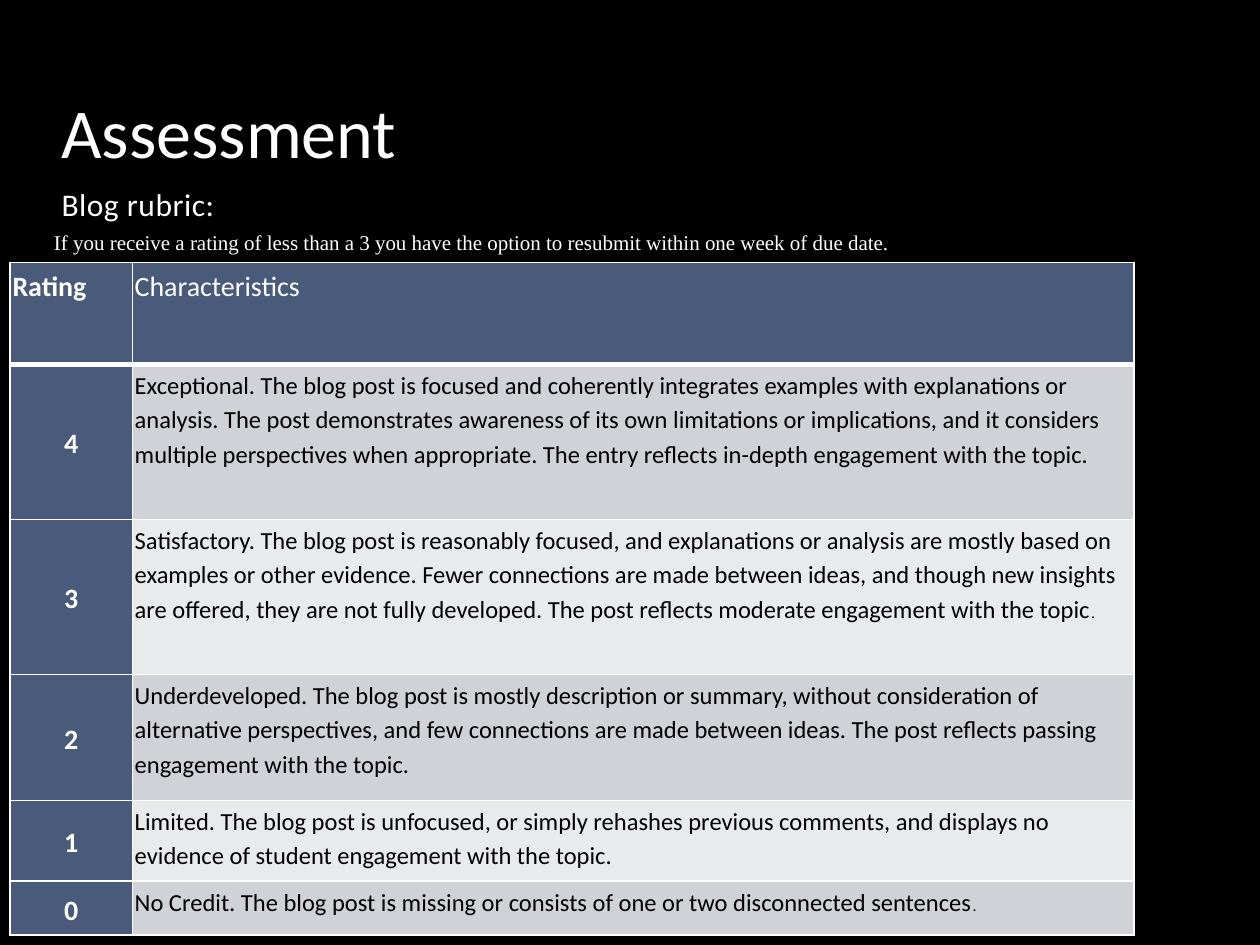
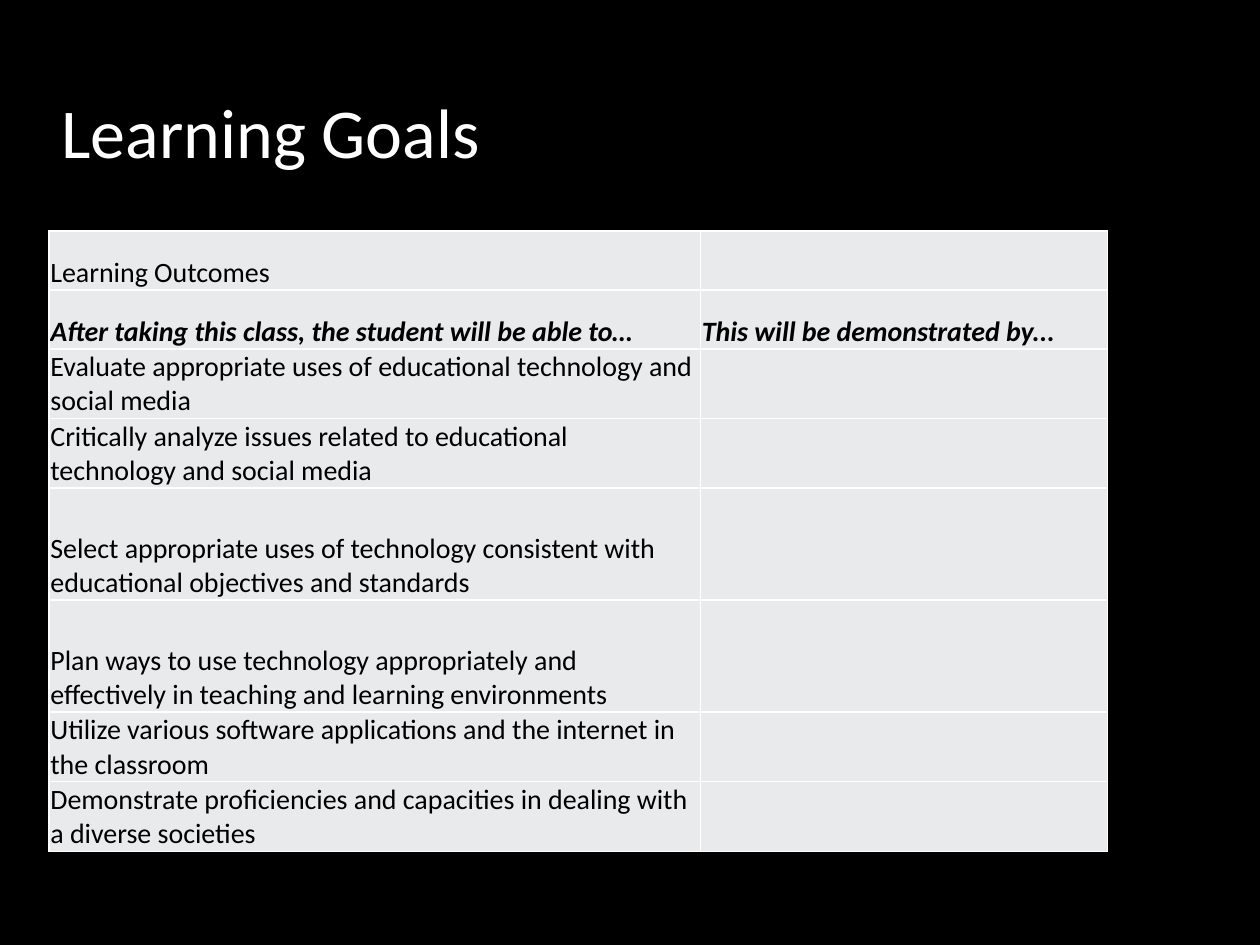
from lxml import etree
from pptx import Presentation
from pptx.dml.color import RGBColor
from pptx.enum.text import MSO_ANCHOR, MSO_AUTO_SIZE, PP_ALIGN
from pptx.oxml.ns import qn
from pptx.util import Pt

TOP, MIDDLE, BOTTOM = MSO_ANCHOR.TOP, MSO_ANCHOR.MIDDLE, MSO_ANCHOR.BOTTOM
FIT_SHAPE = MSO_AUTO_SIZE.SHAPE_TO_FIT_TEXT
LEFT, CENTER = PP_ALIGN.LEFT, PP_ALIGN.CENTER

BLACK = RGBColor(0x00, 0x00, 0x00)
WHITE = RGBColor(0xFF, 0xFF, 0xFF)
SLATE = RGBColor(0x4A, 0x5A, 0x7A)
GREY = RGBColor(0xD0, 0xD2, 0xD7)
PALE = RGBColor(0xE9, 0xEA, 0xEC)

SANS = "Calibri"
SERIF = "Times New Roman"
MARGIN = 28.08
CONTENT_W = 604.8

RATINGS = [
    ("4", 88.56, "Exceptional. The blog post is focused and coherently integrates "
     "examples with explanations or analysis. The post demonstrates awareness of its "
     "own limitations or implications, and it considers multiple perspectives when "
     "appropriate. The entry reflects in-depth engagement with the topic.", ""),
    ("3", 88.56, "Satisfactory. The blog post is reasonably focused, and explanations "
     "or analysis are mostly based on examples or other evidence. Fewer connections "
     "are made between ideas, and though new insights are offered, they are not fully "
     "developed. The post reflects moderate engagement with the topic", "."),
    ("2", 72, "Underdeveloped. The blog post is mostly description or summary, without "
     "consideration of alternative perspectives, and few connections are made between "
     "ideas. The post reflects passing engagement with the topic.", ""),
    ("1", 46.08, "Limited. The blog post is unfocused, or simply rehashes previous "
     "comments, and displays no evidence of student engagement with the topic.", ""),
    ("0", 30.96, "No Credit. The blog post is missing or consists of one or two "
     "disconnected sentences", "."),
]

HEADING_H, SHORT_H, TALL_H = 33.7, 39.8, 64
OUTCOMES = [
    (SHORT_H, "Evaluate appropriate uses of educational technology and social media"),
    (SHORT_H, "Critically analyze issues related to educational technology and social media"),
    (TALL_H, "Select appropriate uses of technology consistent with educational "
     "objectives and standards"),
    (TALL_H, "Plan ways to use technology appropriately and effectively in teaching "
     "and learning environments"),
    (SHORT_H, "Utilize various software applications and the internet in the classroom"),
    (SHORT_H, "Demonstrate proficiencies and capacities in dealing with a diverse societies"),
]


class Deck:
    def __init__(self):
        self.prs = Presentation()
        self.prs.slide_width, self.prs.slide_height = Pt(720), Pt(540)
        self.s = None

    def slide(self, title):
        self.s = self.prs.slides.add_slide(self.prs.slide_layouts[6])
        fill = self.s.background.fill
        fill.solid()
        fill.fore_color.rgb = BLACK
        self.text(title, MARGIN, 18, CONTENT_W, 84.24, 40, anchor=BOTTOM)

    def font(self, p, size, color, name=SANS, bold=False, italic=False):
        f = p.font
        f.name, f.size, f.bold, f.italic = name, Pt(size), bold, italic
        f.color.rgb = color

    def text(self, text, x, y, w, h, size, name=SANS, anchor=TOP, wrap=True, spacing=0):
        sp = self.s.shapes.add_textbox(Pt(x), Pt(y), Pt(w), Pt(h))
        tf = sp.text_frame
        tf.word_wrap, tf.vertical_anchor = wrap, anchor
        if not wrap:
            tf.auto_size = FIT_SHAPE
        p = tf.paragraphs[0]
        r = p.add_run()
        r.text = text
        if spacing:
            r._r.get_or_add_rPr().set("spc", str(round(spacing * 100)))
        self.font(p, size, WHITE, name)

    def table(self, x, y, widths, heights):
        frame = self.s.shapes.add_table(len(heights), len(widths), Pt(x), Pt(y),
                                        Pt(sum(widths)), Pt(sum(heights)))
        table = frame.table
        table.first_row = table.horz_banding = False
        for column, w in zip(table.columns, widths):
            column.width = Pt(w)
        for row, h in zip(table.rows, heights):
            row.height = Pt(h)
        return table

    def borders(self, cell, top=1, bottom=1):
        tcPr = cell._tc.get_or_add_tcPr()
        sides = (("a:lnL", 1), ("a:lnR", 1), ("a:lnT", top), ("a:lnB", bottom))
        for i, (tag, width) in enumerate(sides):
            ln = etree.Element(qn(tag), w=str(Pt(width)))
            fill = etree.SubElement(ln, qn("a:solidFill"))
            etree.SubElement(fill, qn("a:srgbClr"), val=str(WHITE))
            tcPr.insert(i, ln)

    def cell(self, cell, text, fill, color, size=16, anchor=TOP, align=LEFT, inset=1.44,
             bottom_inset=1.44, line=None, small="", bold=False, italic=False,
             top=1, bottom=1):
        cell.fill.solid()
        cell.fill.fore_color.rgb = fill
        self.borders(cell, top, bottom)
        cell.vertical_anchor = anchor
        cell.margin_left = cell.margin_right = cell.margin_top = Pt(inset)
        cell.margin_bottom = Pt(bottom_inset)
        p = cell.text_frame.paragraphs[0]
        p.alignment = align
        if line:
            p.line_spacing = line
        if text:
            p.add_run().text = text
        if small:
            r = p.add_run()
            r.text = small
            r.font.size = Pt(9)
        self.font(p, size, color, bold=bold, italic=italic)


def assessment(deck):
    deck.slide("Assessment")
    deck.text("Blog rubric:", MARGIN, 102.24, CONTENT_W, 372.24, 18, spacing=0.3)
    heights = [58.32] + [h for _, h, _, _ in RATINGS]
    table = deck.table(5.76, 149.9, [69.84, 572.4], heights)
    for col, heading in enumerate(("Rating", "Characteristics")):
        deck.cell(table.cell(0, col), heading, SLATE, WHITE, line=1.15,
                  bold=col == 0, bottom=3)
    for row, (rating, _, description, small) in enumerate(RATINGS, 1):
        top = 3 if row == 1 else 1
        deck.cell(table.cell(row, 0), rating, SLATE, WHITE, anchor=MIDDLE, align=CENTER,
                  line=1.15, bold=True, top=top)
        deck.cell(table.cell(row, 1), description, GREY if row % 2 else PALE, BLACK, 14,
                  line=1.15, small=small, top=top)
    deck.text("If you receive a rating of less than a 3 you have the option to resubmit "
              "within one week of due date.", 23.76, 120.24, 720, 36, 12, SERIF, MIDDLE,
              wrap=False)


def learning_goals(deck):
    deck.slide("Learning Goals")
    rows = [
        (HEADING_H, "Learning Outcomes", ""),
        (HEADING_H, "After taking this class, the student will be able to…",
         "This will be demonstrated by..."),
    ] + [(h, outcome, "") for h, outcome in OUTCOMES]
    table = deck.table(MARGIN, 132, [372.24, 232.56], [h for h, _, _ in rows])
    for row, (_, *texts) in enumerate(rows):
        for col, text in enumerate(texts):
            deck.cell(table.cell(row, col), text, PALE, BLACK, anchor=BOTTOM, inset=0.72,
                      bottom_inset=0, bold=row == 1, italic=row == 1)


def main():
    deck = Deck()
    assessment(deck)
    learning_goals(deck)
    deck.prs.save("out.pptx")


if __name__ == "__main__":
    main()
